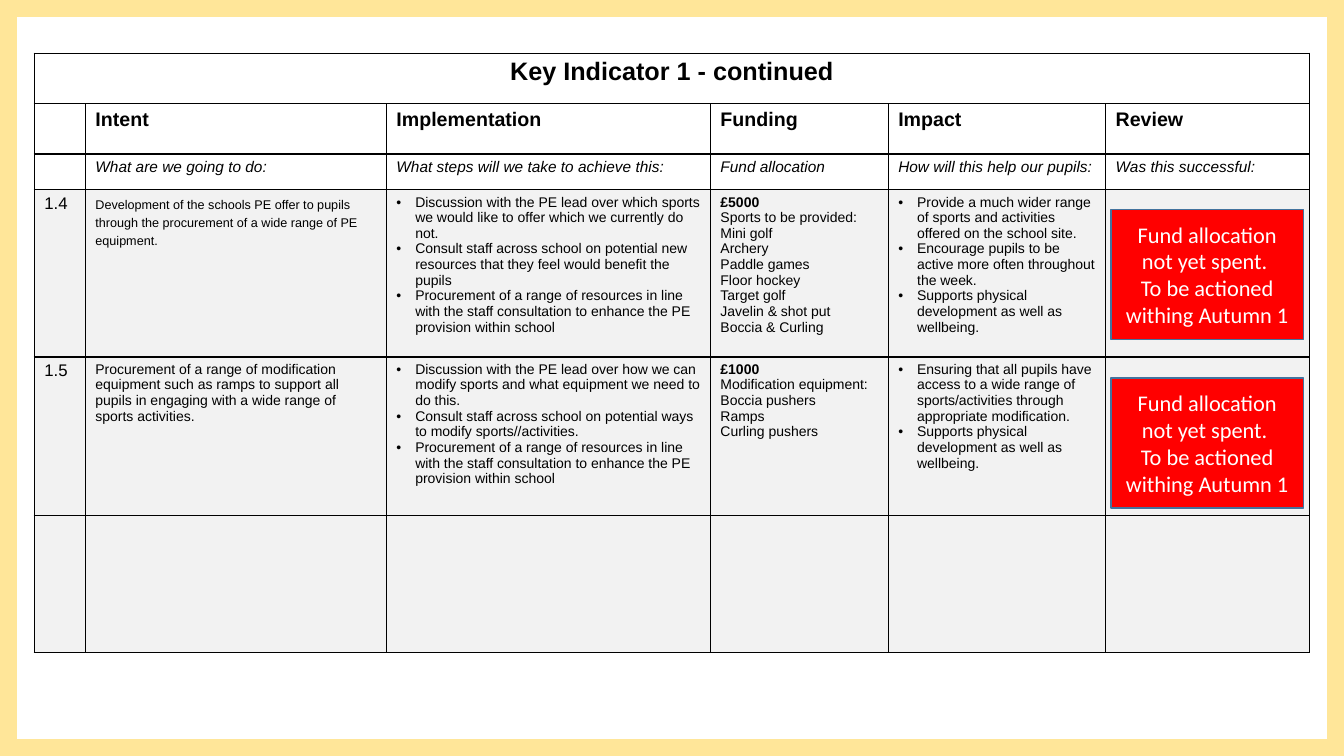
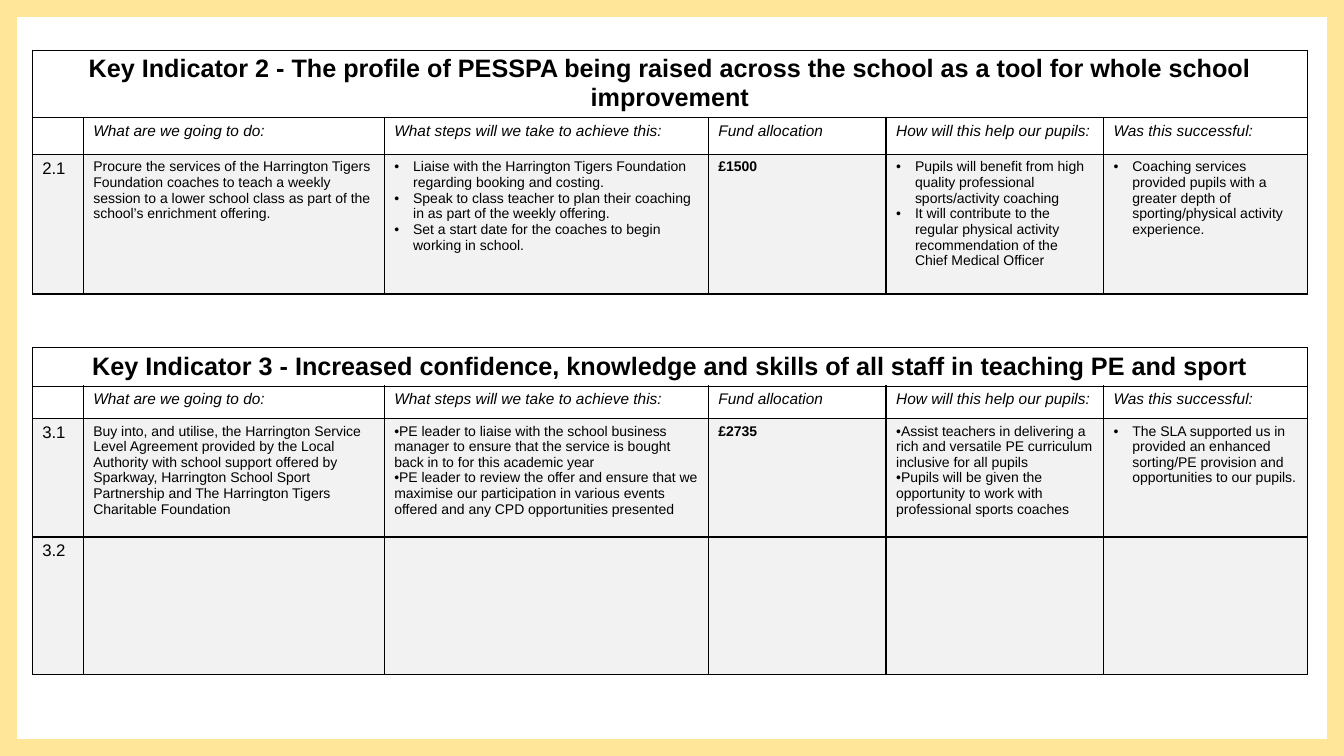
from dataclasses import dataclass

from lxml import etree
from pptx import Presentation
from pptx.dml.color import RGBColor
from pptx.enum.shapes import MSO_SHAPE
from pptx.enum.text import MSO_ANCHOR, PP_ALIGN
from pptx.oxml.ns import qn
from pptx.util import Pt

FRAME, RECT = MSO_SHAPE.FRAME, MSO_SHAPE.RECTANGLE
CENTER, MIDDLE = PP_ALIGN.CENTER, MSO_ANCHOR.MIDDLE


@dataclass(frozen=True)
class RowStyle:
    size: float
    bold: bool = False
    italic: bool = False


@dataclass(frozen=True)
class Theme:
    ink: RGBColor = RGBColor(0, 0, 0)
    white: RGBColor = RGBColor(255, 255, 255)
    body_fill: RGBColor = RGBColor(0xF2, 0xF2, 0xF2)
    frame: RGBColor = RGBColor(0xFF, 0xE6, 0x99)
    alert: RGBColor = RGBColor(255, 0, 0)
    alert_line: RGBColor = RGBColor(0x43, 0x73, 0x9E)
    table_font: str = "Arial"
    note_font: str = "Calibri"
    title: RowStyle = RowStyle(18, bold=True)
    heading: RowStyle = RowStyle(14, bold=True)
    question: RowStyle = RowStyle(11, italic=True)
    label: RowStyle = RowStyle(12)
    body: RowStyle = RowStyle(10)
    small_size: float = 9
    note_size: float = 16
    line_width: float = 1


THEME = Theme()
SLIDE_W, SLIDE_H = 960, 540
FRAME_RATIO = 0.022
COL_WIDTHS = [36.5, 215, 231.5, 127, 155.3, 145.7]
LABEL_COL, INTENT_COL, FUNDING_COL = 0, 1, 3
BULLET_COLS = (2, 4, 5)
MARGIN_X, MARGIN_Y, BULLET_INDENT = 7.2, 3.4, 13.5

HEADINGS = ["", "Intent", "Implementation", "Funding", "Impact", "Review"]
QUESTIONS = ["", "What are we going to do:", "What steps will we take to achieve this:",
             "Fund allocation", "How will this help our pupils:", "Was this successful:"]
NOTE = "Fund allocation not yet spent. \nTo be actioned withing Autumn 1"
PROCUREMENT = ("Procurement of a range of resources in line with the staff consultation "
               "to enhance the PE provision within school")
DEVELOPMENT = "Supports physical development as well as wellbeing."

# Body rows: label, intent, implementation, funding, impact, review
ROW_1_4 = [
    "1.4",
    "Development of the schools PE offer to pupils through the procurement of a wide "
    "range of PE equipment.",
    ["Discussion with the PE lead over which sports we would like to offer which we "
     "currently do not.",
     "Consult staff across school on potential new resources that they feel would "
     "benefit the pupils",
     PROCUREMENT],
    ["£5000", "Sports to be provided:", "Mini golf", "Archery", "Paddle games",
     "Floor hockey", "Target golf", "Javelin & shot put", "Boccia & Curling"],
    ["Provide a much wider range of sports and activities offered on the school site.",
     "Encourage pupils to be active more often throughout the week.",
     DEVELOPMENT],
    "",
]
ROW_1_5 = [
    "1.5",
    "Procurement of a range of modification equipment such as ramps to support all "
    "pupils in engaging with a wide range of sports activities.",
    ["Discussion with the PE lead over how we can modify sports and what equipment we "
     "need to do this.",
     "Consult staff across school on potential ways to modify sports//activities.",
     PROCUREMENT],
    ["£1000", "Modification equipment:", "Boccia pushers", "Ramps", "Curling pushers"],
    ["Ensuring that all pupils have access to a wide range of sports/activities through "
     "appropriate modification.",
     DEVELOPMENT],
    "",
]
ROW_2_1 = [
    "2.1",
    "Procure the services of the Harrington Tigers Foundation coaches to teach a weekly "
    "session to a lower school class as part of the school’s enrichment offering.",
    ["Liaise with the Harrington Tigers Foundation regarding booking and costing.",
     "Speak to class teacher to plan their coaching in as part of the weekly offering.",
     "Set a start date for the coaches to begin working in school."],
    "£1500",
    ["Pupils will benefit from high quality professional sports/activity coaching",
     "It will contribute to the regular physical activity recommendation of the Chief "
     "Medical Officer"],
    "Coaching services provided pupils with a greater depth of sporting/physical "
    "activity experience.",
]
ROW_3_1 = [
    "3.1",
    "Buy into, and utilise, the Harrington Service Level Agreement provided by the Local "
    "Authority with school support offered by Sparkway, Harrington School Sport "
    "Partnership and The Harrington Tigers Charitable Foundation",
    ["•PE leader to liaise with the school business manager to ensure that the service "
     "is bought back in to for this academic year",
     "•PE leader to review the offer and ensure that we maximise our participation in "
     "various events offered and any CPD opportunities presented"],
    "£2735",
    ["•Assist teachers in delivering a rich and versatile PE curriculum inclusive for "
     "all pupils",
     "•Pupils will be given the opportunity to work with professional sports coaches"],
    "The SLA supported us in provided an enhanced sorting/PE provision and opportunities "
    "to our pupils.",
]
EMPTY_ROW = [""] * 6
ROW_3_2 = ["3.2"] + [""] * 5


def add_box(s, kind, box, fill, line):
    """Add a filled preset shape without shadow."""
    sp = s.shapes.add_shape(kind, *map(Pt, box))
    sp.shadow.inherit = False
    sp.fill.solid()
    sp.fill.fore_color.rgb = fill
    sp.line.color.rgb = line
    sp.line.width = Pt(THEME.line_width)
    return sp


def add_frame(s):
    sp = add_box(s, FRAME, (0, 0, SLIDE_W, SLIDE_H), THEME.frame, THEME.frame)
    sp.adjustments[0] = FRAME_RATIO


def add_note(s, top):
    sp = add_box(s, RECT, (793.5, top, 137.5, 93), THEME.alert, THEME.alert_line)
    tf = sp.text_frame
    tf.word_wrap = True
    tf.vertical_anchor = MIDDLE
    tf.text = NOTE
    for p in tf.paragraphs:
        p.alignment = CENTER
        for r in p.runs:
            r.font.name = THEME.note_font
            r.font.size = Pt(THEME.note_size)
            r.font.color.rgb = THEME.white


def add_bullet(p):
    pPr = p._p.get_or_add_pPr()
    pPr.set("marL", str(Pt(BULLET_INDENT)))
    pPr.set("indent", str(-Pt(BULLET_INDENT)))
    etree.SubElement(pPr, qn("a:buFont"), typeface=THEME.table_font)
    etree.SubElement(pPr, qn("a:buChar"), char="•")


def add_borders(cell):
    tcPr = cell._tc.get_or_add_tcPr()
    for side in ("lnL", "lnR", "lnT", "lnB"):
        ln = etree.SubElement(tcPr, qn(f"a:{side}"), w=str(Pt(THEME.line_width)))
        fill = etree.SubElement(ln, qn("a:solidFill"))
        etree.SubElement(fill, qn("a:srgbClr"), val=str(THEME.ink))


def format_cell(cell, fill):
    cell.margin_left = cell.margin_right = Pt(MARGIN_X)
    cell.margin_top = cell.margin_bottom = Pt(MARGIN_Y)
    add_borders(cell)
    if fill is None:
        cell.fill.background()
    else:
        cell.fill.solid()
        cell.fill.fore_color.rgb = fill


def format_paragraph(p, style, bold):
    # The end mark sets the height of an empty cell
    p._p.get_or_add_endParaRPr().set("sz", str(int(style.size * 100)))
    for r in p.runs:
        r.font.name = THEME.table_font
        r.font.size = Pt(style.size)
        r.font.color.rgb = THEME.ink
        r.font.bold = bold
        r.font.italic = style.italic


def fill_cell(cell, content, style, col):
    """Write a cell; body cells take label, bullet and amount rules by column."""
    is_body = style == THEME.body
    if is_body and col == LABEL_COL:
        style = THEME.label
    format_cell(cell, THEME.body_fill if is_body else None)
    lines = content if isinstance(content, list) else [content]
    tf = cell.text_frame
    tf.text = "\n".join(lines)
    for i, (p, line) in enumerate(zip(tf.paragraphs, lines)):
        is_amount = is_body and col == FUNDING_COL and i == 0
        format_paragraph(p, style, style.bold or is_amount)
        if is_body and col in BULLET_COLS and line and not line.startswith("•"):
            add_bullet(p)


def add_indicator(s, left, top, rows):
    """Add one indicator table; rows hold (style, height, cells), title row first."""
    height = sum(h for _, h, _ in rows)
    shape = s.shapes.add_table(len(rows), len(COL_WIDTHS), Pt(left), Pt(top),
                               Pt(sum(COL_WIDTHS)), Pt(height))
    table = shape.table
    table.first_row = table.horz_banding = False
    for col, width in zip(table.columns, COL_WIDTHS):
        col.width = Pt(width)
    for i, (style, row_height, cells) in enumerate(rows):
        table.rows[i].height = Pt(row_height)
        for j, content in enumerate(cells):
            fill_cell(table.cell(i, j), content, style, j)
    title = table.cell(0, 0)
    title.merge(table.cell(0, len(COL_WIDTHS) - 1))
    title.text_frame.paragraphs[0].alignment = CENTER
    return table


def title_row(text, height):
    return THEME.title, height, [text] + [""] * 5


def build_indicator_1(s):
    table = add_indicator(s, 24.5, 38, [
        title_row("Key Indicator 1 - continued", 36),
        (THEME.heading, 36, HEADINGS),
        (THEME.question, 25.5, QUESTIONS),
        (THEME.body, 119.5, ROW_1_4),
        (THEME.body, 113, ROW_1_5),
        (THEME.body, 98, EMPTY_ROW),
    ])
    # Smaller, more open text for the first intent
    p = table.cell(3, INTENT_COL).text_frame.paragraphs[0]
    p.line_spacing = Pt(12.8)
    p.runs[0].font.size = Pt(THEME.small_size)
    add_frame(s)
    for top in (149.5, 270):
        add_note(s, top)


def build_indicators_2_and_3(s):
    add_indicator(s, 23, 36, [
        title_row("Key Indicator 2 - The profile of PESSPA being raised across the school "
                  "as a tool for whole school improvement", 48),
        (THEME.question, 26.5, QUESTIONS),
        (THEME.body, 99.5, ROW_2_1),
    ])
    add_indicator(s, 23, 248.3, [
        title_row("Key Indicator 3 - Increased confidence, knowledge and skills of all "
                  "staff in teaching PE and sport", 27.5),
        (THEME.question, 23.3, QUESTIONS),
        (THEME.body, 84.5, ROW_3_1),
        (THEME.body, 98.5, ROW_3_2),
    ])
    add_frame(s)


def main():
    prs = Presentation()
    prs.slide_width, prs.slide_height = Pt(SLIDE_W), Pt(SLIDE_H)
    blank = prs.slide_layouts[6]
    for build in (build_indicator_1, build_indicators_2_and_3):
        build(prs.slides.add_slide(blank))
    prs.save("out.pptx")


if __name__ == "__main__":
    main()
